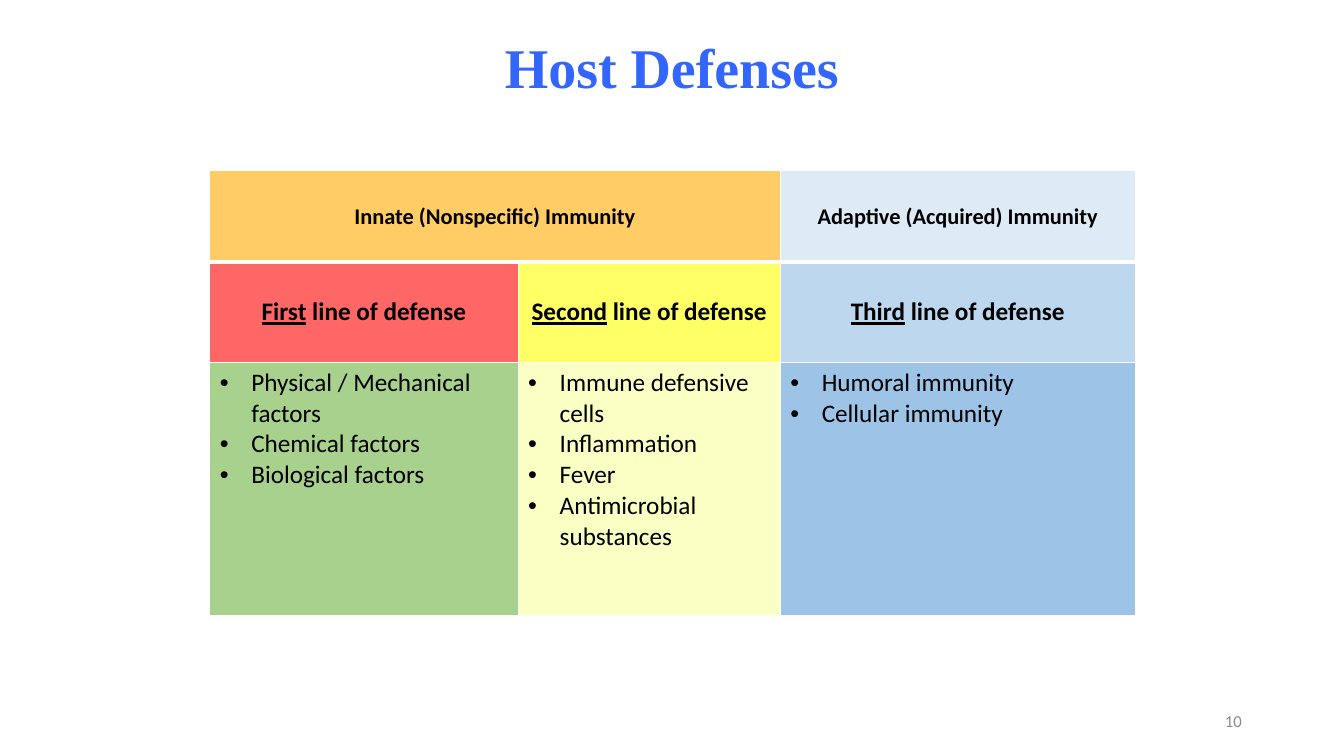
"""Builds the Host Defenses slide with its table of immunity types."""
from lxml import etree
from pptx import Presentation
from pptx.dml.color import RGBColor
from pptx.enum import text
from pptx.oxml import ns
from pptx.util import Pt

BLACK = RGBColor(0x00, 0x00, 0x00)
WHITE = RGBColor(0xFF, 0xFF, 0xFF)
GRAY = RGBColor(0x8C, 0x8C, 0x8C)
TITLE_BLUE = RGBColor(0x33, 0x66, 0xFF)
ORANGE = RGBColor(0xFF, 0xCC, 0x66)
RED = RGBColor(0xFF, 0x66, 0x66)
YELLOW = RGBColor(0xFF, 0xFF, 0x66)
GREEN = RGBColor(0xA9, 0xD1, 0x8E)
CREAM = RGBColor(0xFA, 0xFF, 0xC4)
PALE_BLUE = RGBColor(0xDE, 0xEB, 0xF7)
LIGHT_BLUE = RGBColor(0xBD, 0xD7, 0xEE)
MID_BLUE = RGBColor(0x9D, 0xC3, 0xE6)

COLUMN_WIDTHS = (220.3, 187.2, 253.7)
ROW_HEIGHTS = (65.5, 71.5, 181.3)
BULLET_INDENT = Pt(22.5)
THIN, THICK = Pt(1), Pt(3)

IMMUNITY_TYPES = (
    (0, "Innate (Nonspecific) Immunity", ORANGE),
    (2, "Adaptive (Acquired) Immunity", PALE_BLUE),
)
DEFENSE_LINES = (
    ("First", RED, GREEN,
     ("Physical / Mechanical factors", "Chemical factors", "Biological factors")),
    ("Second", YELLOW, CREAM,
     ("Immune defensive cells", "Inflammation", "Fever", "Antimicrobial substances")),
    ("Third", LIGHT_BLUE, MID_BLUE,
     ("Humoral immunity", "Cellular immunity")),
)


def add_span(para, words, color=BLACK, **formats):
    """Add a run of text with the given font values."""
    span = para.add_run()
    span.text = words
    span.font.color.rgb = color
    for name, value in ({"name": "Calibri"} | formats).items():
        setattr(span.font, name, value)


def add_text_box(page, words, place, align, anchor, **formats):
    """Add a one-line text box at a place given in points."""
    frame = page.shapes.add_textbox(*map(Pt, place)).text_frame
    frame.word_wrap = True
    frame.vertical_anchor = anchor
    para = frame.paragraphs[0]
    para.alignment = align
    add_span(para, words, **formats)


def set_borders(cell, bottom):
    """Draw white borders around a cell, with its own bottom width."""
    properties = cell._tc.get_or_add_tcPr()
    widths = {"a:lnL": THIN, "a:lnR": THIN, "a:lnT": THIN, "a:lnB": bottom}
    for position, (tag, width) in enumerate(widths.items()):
        line = etree.Element(ns.qn(tag), w=str(width))
        fill = etree.SubElement(line, ns.qn("a:solidFill"))
        etree.SubElement(fill, ns.qn("a:srgbClr"), val=str(WHITE))
        properties.insert(position, line)


def paint_cell(cell, color, bottom=THIN):
    """Fill a cell and give it borders."""
    cell.fill.solid()
    cell.fill.fore_color.rgb = color
    set_borders(cell, bottom)


def fill_heading(cell, spans, size):
    """Write a centred bold heading from (words, underline) pairs."""
    cell.vertical_anchor = text.MSO_ANCHOR.MIDDLE
    para = cell.text_frame.paragraphs[0]
    para.alignment = text.PP_ALIGN.CENTER
    for words, underline in spans:
        add_span(para, words, size=size, bold=True, underline=underline)


def fill_bullets(cell, items):
    """Write one bulleted paragraph for each item."""
    frame = cell.text_frame
    for index, item in enumerate(items):
        para = frame.add_paragraph() if index else frame.paragraphs[0]
        properties = para._p.get_or_add_pPr()
        properties.set("marL", str(BULLET_INDENT))
        properties.set("indent", str(-BULLET_INDENT))
        etree.SubElement(properties, ns.qn("a:buFont"), typeface="Arial")
        etree.SubElement(properties, ns.qn("a:buChar"), char="•")
        add_span(para, item, size=Pt(18), bold=False)


def add_defense_table(page):
    """Add the table of immunity types and lines of defense."""
    place = (149.8, 121.8, sum(COLUMN_WIDTHS), sum(ROW_HEIGHTS))
    table = page.shapes.add_table(3, 3, *map(Pt, place)).table
    for column, width in zip(table.columns, COLUMN_WIDTHS):
        column.width = Pt(width)
    for row, height in zip(table.rows, ROW_HEIGHTS):
        row.height = Pt(height)
    table.cell(0, 0).merge(table.cell(0, 1))
    paint_cell(table.cell(0, 1), ORANGE, THICK)
    for column, words, color in IMMUNITY_TYPES:
        cell = table.cell(0, column)
        paint_cell(cell, color, THICK)
        fill_heading(cell, [(words, False)], Pt(16))
    for column, (rank, head_color, body_color, items) in enumerate(DEFENSE_LINES):
        heading, body = table.cell(1, column), table.cell(2, column)
        paint_cell(heading, head_color)
        fill_heading(heading, [(rank, True), (" line of defense", False)], Pt(18))
        paint_cell(body, body_color)
        fill_bullets(body, items)


def main():
    """Build and save the slide."""
    deck = Presentation()
    deck.slide_width, deck.slide_height = Pt(960), Pt(540)
    page = deck.slides.add_slide(deck.slide_layouts[6])
    add_text_box(page, "Host Defenses", (141.1, 19.4, 677.5, 108.7),
                 text.PP_ALIGN.CENTER, text.MSO_ANCHOR.TOP,
                 color=TITLE_BLUE, name="Times New Roman", size=Pt(40), bold=True)
    add_defense_table(page)
    add_text_box(page, "10", (678.2, 500.4, 216, 28.8),
                 text.PP_ALIGN.RIGHT, text.MSO_ANCHOR.MIDDLE,
                 color=GRAY, size=Pt(12))
    deck.save("out.pptx")


if __name__ == "__main__":
    main()
